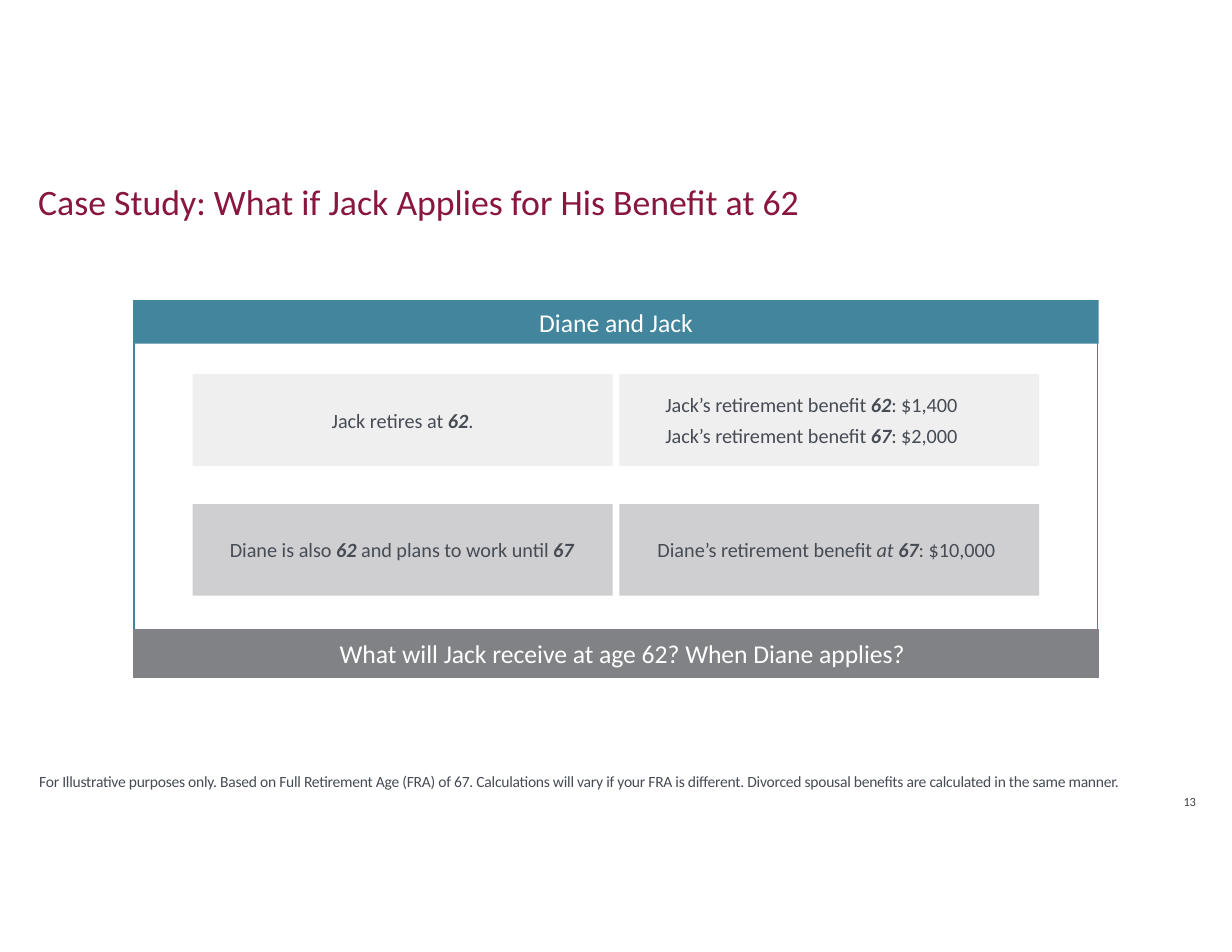
from pptx import Presentation
from pptx.dml.color import RGBColor
from pptx.enum.shapes import MSO_SHAPE
from pptx.enum.text import MSO_ANCHOR, PP_ALIGN
from pptx.util import Pt

MAROON = RGBColor(0x89, 0x16, 0x3D)
TEAL = RGBColor(0x42, 0x85, 0x9C)
GRAY = RGBColor(0x80, 0x82, 0x85)
LIGHT = RGBColor(0xEF, 0xEF, 0xF0)
MID = RGBColor(0xCF, 0xCF, 0xD1)
SLATE = RGBColor(0x46, 0x4B, 0x54)
CHARCOAL = RGBColor(0x41, 0x3F, 0x42)
WHITE = RGBColor(0xFF, 0xFF, 0xFF)

# Each fact is a left indent and its lines; a line is a list of (text, style),
# where style holds "b" for bold and "i" for italic.
FACT_ROWS = [
    (LIGHT, [
        (89.3, [[("Jack retires at ", ""), ("62", "bi"), (".", "")]]),
        (29.5, [[("Jack’s retirement benefit ", ""), (age, "bi"),
                 (": " + amount, "")]
                for age, amount in (("62", "$1,400"), ("67", "$2,000"))]),
    ]),
    (MID, [
        (23.8, [[("Diane is also ", ""), ("62 ", "bi"),
                 ("and plans to work until ", ""), ("67", "bi")]]),
        (24.5, [[("Diane’s retirement benefit ", ""), ("at ", "i"),
                 ("67", "bi"), (": $10,000", "")]]),
    ]),
]


def write(sp, lines, size, color, align=PP_ALIGN.LEFT,
          anchor=MSO_ANCHOR.MIDDLE, left=0, top=0, tracking=0, gap=0):
    """Fill a shape with lines of styled runs; tracking is in points."""
    tf = sp.text_frame
    tf.word_wrap = True
    tf.vertical_anchor = anchor
    tf.margin_left, tf.margin_top = Pt(left), Pt(top)
    tf.margin_right = tf.margin_bottom = 0
    for i, line in enumerate(lines):
        p = tf.add_paragraph() if i else tf.paragraphs[0]
        p.alignment = align
        if i:
            p.space_before = Pt(gap)
        for text, style in line:
            r = p.add_run()
            r.text = text
            r.font.name = "Calibri"
            r.font.size = Pt(size)
            r.font.color.rgb = color
            r.font.bold = "b" in style
            r.font.italic = "i" in style
            if tracking:
                r.font._element.set("spc", str(round(tracking * 100)))


def add_rect(s, x, y, w, h, fill=None, line=None, width=0.84):
    sp = s.shapes.add_shape(MSO_SHAPE.RECTANGLE, Pt(x), Pt(y), Pt(w), Pt(h))
    sp.shadow.inherit = False
    if fill is None:
        sp.fill.background()
    else:
        sp.fill.solid()
        sp.fill.fore_color.rgb = fill
    if line is None:
        sp.line.fill.background()
    else:
        sp.line.color.rgb = line
        sp.line.width = Pt(width)
    return sp


def add_label(s, x, y, w, h, text, size, color, **layout):
    sp = s.shapes.add_textbox(Pt(x), Pt(y), Pt(w), Pt(h))
    write(sp, [[(text, "")]], size, color, anchor=MSO_ANCHOR.TOP, **layout)


def add_facts(s, x, y, w, h):
    """Lay out the facts as a grid of two columns and two rows."""
    col_gap, cell_h = 4.3, 59
    cell_w = (w - col_gap) / 2
    row_step = h - cell_h
    for row, (fill, facts) in enumerate(FACT_ROWS):
        for col, (indent, lines) in enumerate(facts):
            cell = add_rect(s, x + col * (cell_w + col_gap),
                            y + row * row_step, cell_w, cell_h, fill)
            write(cell, lines, 13, SLATE, left=indent, gap=4)


def add_case_panel(s, x, y, w, h):
    header_h, question_h = 28, 31
    question_y = y + h - question_h
    add_rect(s, x + 0.5, y + 0.5, w - 1, h - question_h, line=TEAL)
    header = add_rect(s, x, y, w, header_h, TEAL)
    write(header, [[("Diane and Jack", "")]], 16.5, WHITE, PP_ALIGN.CENTER)
    question = add_rect(s, x, question_y, w, question_h, GRAY, GRAY, 0.25)
    write(question, [[("What will Jack receive at age 62? When Diane applies?",
                       "")]], 16.5, WHITE, PP_ALIGN.CENTER, left=8)
    add_facts(s, x + 38.2, y + 47.5, w - 76.4, 142.5)


def main():
    prs = Presentation()
    prs.slide_width, prs.slide_height = Pt(792), Pt(612)
    s = prs.slides.add_slide(prs.slide_layouts[6])
    add_label(s, 24.5, 113, 744, 47,
              "Case Study: What if Jack Applies for His Benefit at 62",
              23, MAROON, top=2.5)
    add_case_panel(s, 85.7, 193, 620.6, 242.6)
    add_label(s, 25.2, 496.5, 730, 12.5,
              "For Illustrative purposes only. Based on Full Retirement Age "
              "(FRA) of 67. Calculations will vary if your FRA is different. "
              "Divorced spousal benefits are calculated in the same manner.",
              10, SLATE, tracking=-0.13)
    add_label(s, 761, 510.5, 11, 10, "13", 8, CHARCOAL, tracking=-0.2)
    prs.save("out.pptx")


if __name__ == "__main__":
    main()
